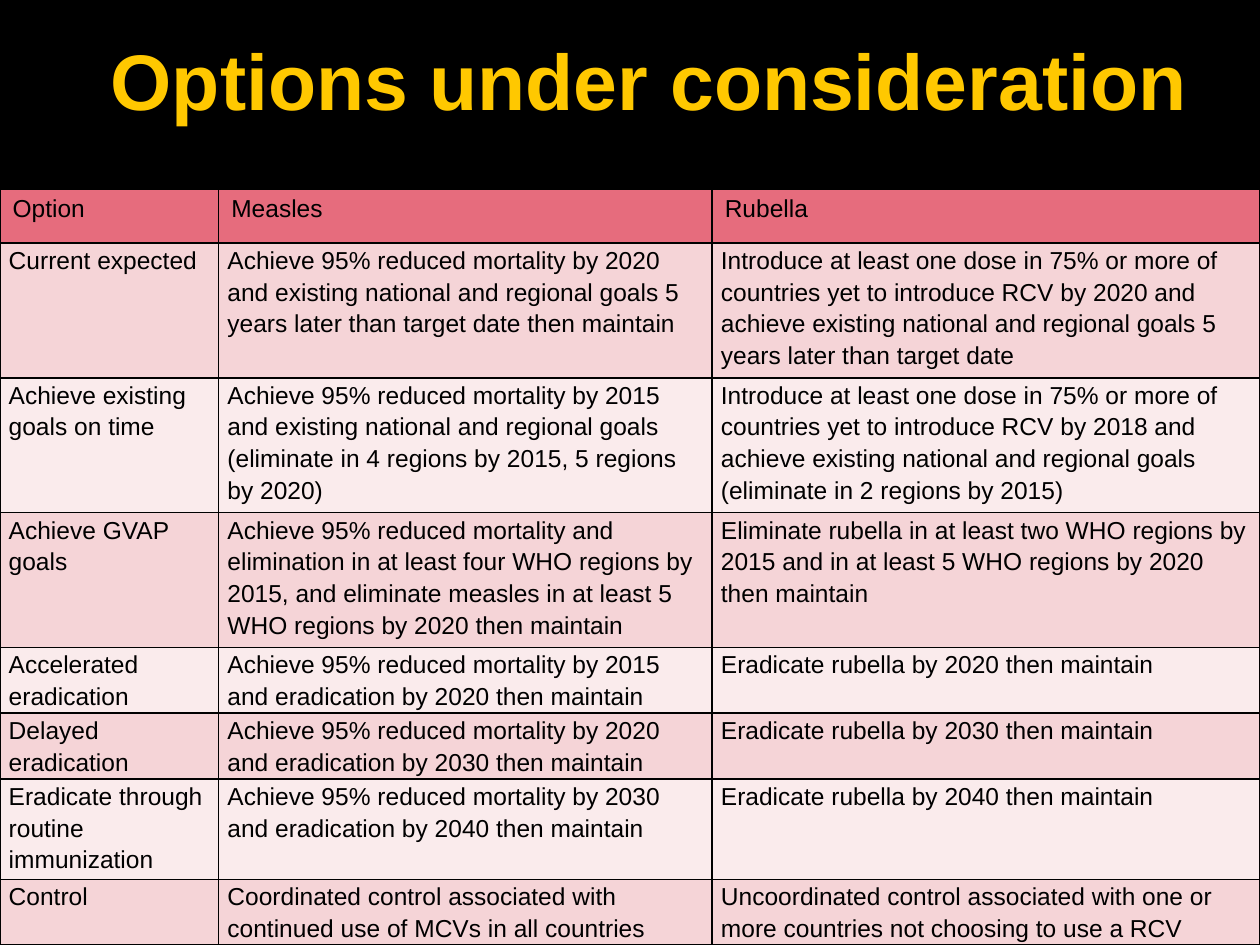
from lxml.etree import SubElement as Sub
from pptx import Presentation
from pptx.dml.color import RGBColor as Rgb
from pptx.enum.shapes import MSO_SHAPE as Shape
from pptx.enum.text import MSO_ANCHOR as Anchor, PP_ALIGN as Align
from pptx.oxml.ns import qn
from pptx.util import Pt


class Theme:
    font = "Arial"
    title, body = 45, 14
    black = Rgb.from_string("000000")
    gold = Rgb.from_string("FFC800")
    head = Rgb.from_string("E66C7D")
    bands = [Rgb.from_string("F5D4D7"), Rgb.from_string("FAEBEC")]


def write(frame, text, size=Theme.body, color=Theme.black, bold=False,
          align=Align.LEFT, space=None):
    frame.word_wrap = True
    par = frame.paragraphs[0]
    par.alignment = align
    par.line_spacing = space
    run = par.add_run()
    run.text = text
    font = run.font
    font.name, font.size, font.bold = Theme.font, Pt(size), bold
    font.color.rgb = color


def edge(cell):
    """Draw a thin black line on all four sides of a cell."""
    props = cell._tc.get_or_add_tcPr()
    for side in ("a:lnL", "a:lnR", "a:lnT", "a:lnB"):
        line = Sub(props, qn(side), w=str(Pt(1)))
        fill = Sub(line, qn("a:solidFill"))
        Sub(fill, qn("a:srgbClr"), val=str(Theme.black))


deck = Presentation()
deck.slide_width, deck.slide_height = Pt(720), Pt(540)
slide = deck.slides.add_slide(deck.slide_layouts[5])

# Black band behind the title
band = slide.shapes.add_shape(Shape.RECTANGLE, 0, 0, Pt(720), Pt(113))
band.shadow.inherit = False
band.fill.solid()
band.fill.fore_color.rgb = Theme.black
band.line.fill.background()

title = slide.shapes.title
band._element.addnext(title._element)
title.left, title.top = Pt(42), Pt(0)
title.width, title.height = Pt(654), Pt(90)
frame = title.text_frame
frame.vertical_anchor = Anchor.MIDDLE
frame.margin_left = Pt(7.2)
frame.margin_right = frame.margin_top = frame.margin_bottom = Pt(3.6)
write(frame, "Options under consideration", size=Theme.title,
      color=Theme.gold, bold=True, align=Align.CENTER)

# Options table
rows = [
    ("Option", "Measles", "Rubella"),
    ("Current expected",
     "Achieve 95% reduced mortality by 2020 and existing national and "
     "regional goals 5 years later than target date then maintain",
     "Introduce at least one dose in 75% or more of countries yet to "
     "introduce RCV by 2020 and achieve existing national and regional "
     "goals 5 years later than target date"),
    ("Achieve existing goals on time",
     "Achieve 95% reduced mortality by 2015 and existing national and "
     "regional goals (eliminate in 4 regions by 2015, 5 regions by 2020)",
     "Introduce at least one dose in 75% or more of countries yet to "
     "introduce RCV by 2018 and achieve existing national and regional "
     "goals (eliminate in 2 regions by 2015)"),
    ("Achieve GVAP goals",
     "Achieve 95% reduced mortality and elimination in at least four WHO "
     "regions by 2015, and eliminate measles in at least 5 WHO regions by "
     "2020 then maintain",
     "Eliminate rubella in at least two WHO regions by 2015 and in at "
     "least 5 WHO regions by 2020 then maintain"),
    ("Accelerated eradication",
     "Achieve 95% reduced mortality by 2015 and eradication by 2020 then "
     "maintain",
     "Eradicate rubella by 2020 then maintain"),
    ("Delayed eradication",
     "Achieve 95% reduced mortality by 2020 and eradication by 2030 then "
     "maintain",
     "Eradicate rubella by 2030 then maintain"),
    ("Eradicate through routine immunization",
     "Achieve 95% reduced mortality by 2030 and eradication by 2040 then "
     "maintain",
     "Eradicate rubella by 2040 then maintain"),
    ("Control",
     "Coordinated control associated with continued use of MCVs in all "
     "countries",
     "Uncoordinated control associated with one or more countries not "
     "choosing to use a RCV"),
]
widths = [125, 282, 313]
heights = [31, 77, 77, 77, 37.6, 37.6, 57.4, 37.6]

table = slide.shapes.add_table(len(rows), len(widths), 0, Pt(108),
                               Pt(sum(widths)), Pt(sum(heights))).table
table.first_row = table.horz_banding = False
for col, width in zip(table.columns, widths):
    col.width = Pt(width)

for r, (texts, height) in enumerate(zip(rows, heights)):
    table.rows[r].height = Pt(height)
    for c, text in enumerate(texts):
        cell = table.cell(r, c)
        edge(cell)
        cell.fill.solid()
        cell.fill.fore_color.rgb = Theme.bands[(r - 1) % 2] if r else Theme.head
        if r:
            cell.margin_left = cell.margin_right = Pt(5)
            cell.margin_top = cell.margin_bottom = 0
        write(cell.text_frame, text, space=1.15 if r else None)

deck.save("out.pptx")
